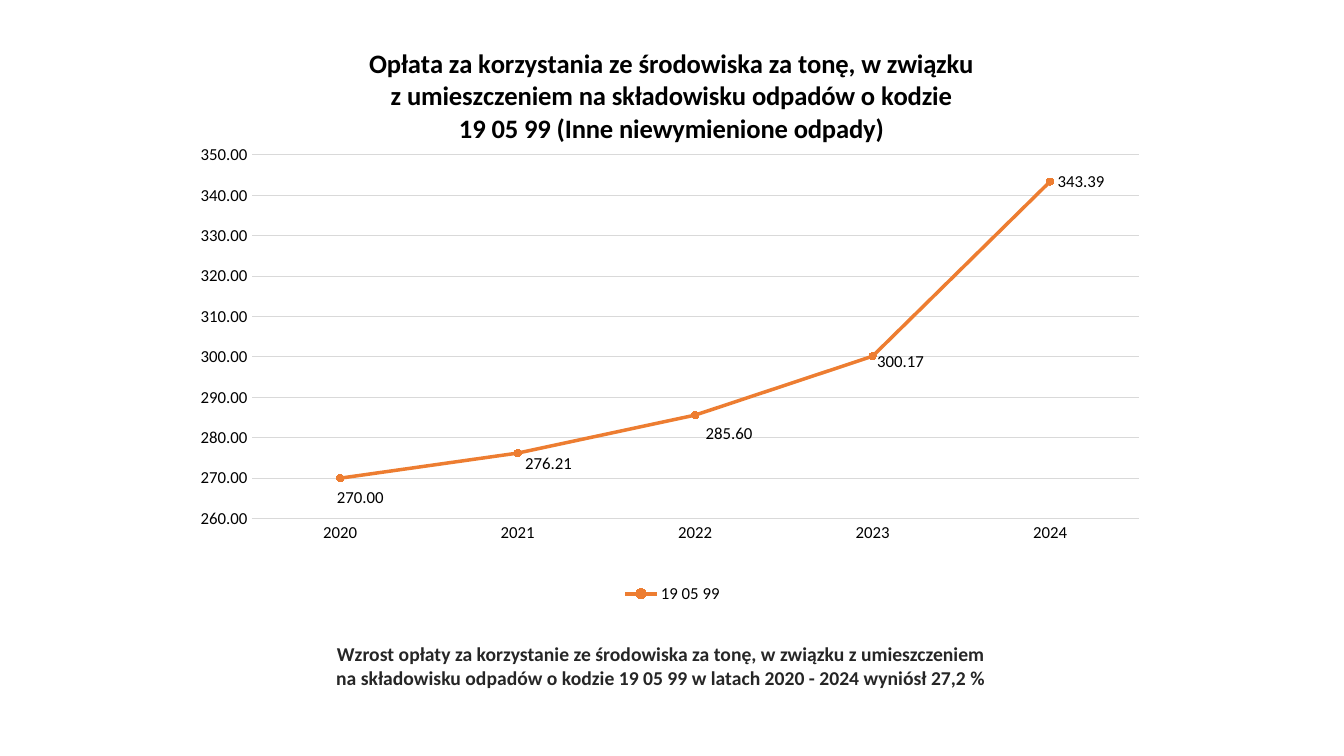
import pptx
import pptx.chart.data
import pptx.dml.color
import pptx.enum.chart
import pptx.enum.text
import pptx.oxml
import pptx.oxml.ns
import pptx.util

THEME = {
    "font": "Calibri",
    "black": "000000", "caption": "262626", "grid": "D9D9D9", "fee": "ED7D31",
    "title_pt": 19, "caption_pt": 14, "label_pt": 12, "base_pt": 10,
}
W, H = 13.33, 7.5


def style(font, size, color="black", bold=False):
    font.name = THEME["font"]
    font.size = pptx.util.Pt(THEME[size])
    font.bold = bold
    font.color.rgb = pptx.dml.color.RGBColor.from_string(THEME[color])


def layout(x, y, w=None, h=None):
    # Manual placement in shares of the chart's size
    parts = [("x", x), ("y", y)]
    modes = [("xMode", "edge"), ("yMode", "edge")] if w or x > 0.1 else []
    if w:
        modes.insert(0, ("layoutTarget", "inner"))
        parts += [("w", w), ("h", h)]
    body = "".join(f'<c:{k} val="{v}"/>' for k, v in modes + parts)
    return pptx.oxml.parse_xml(
        f'<c:layout {pptx.oxml.ns.nsdecls("c")}><c:manualLayout>{body}'
        "</c:manualLayout></c:layout>")


prs = pptx.Presentation()
prs.slide_width = pptx.util.Inches(W)
prs.slide_height = pptx.util.Inches(H)
s = prs.slides.add_slide(prs.slide_layouts[6])
grey = pptx.dml.color.RGBColor.from_string(THEME["grid"])
orange = pptx.dml.color.RGBColor.from_string(THEME["fee"])

# Chart with the yearly fee
data = pptx.chart.data.CategoryChartData(number_format="0.00")
data.categories = ["2020", "2021", "2022", "2023", "2024"]
data.add_series("19 05 99", [270, 276.21, 285.6, 300.17, 343.39])
chart = s.shapes.add_chart(
    pptx.enum.chart.XL_CHART_TYPE.LINE_MARKERS_STACKED,
    *(pptx.util.Inches(v) for v in (1.77, 0.4, 9.8, 5.63)), data).chart
style(chart.font, "base_pt")

# Chart title
chart.has_title = True
title = chart.chart_title
title.include_in_layout = False
tf = title.text_frame
tf.text = ("Opłata za korzystania ze środowiska za tonę, w związku\n"
           "z umieszczeniem na składowisku odpadów o kodzie\n"
           "19 05 99 (Inne niewymienione odpady)")
for p in tf.paragraphs:
    p.alignment = pptx.enum.text.PP_ALIGN.CENTER
    for r in p.runs:
        style(r.font, "title_pt", bold=True)
title_xml = title._element
for old in title_xml.findall(pptx.oxml.ns.qn("c:layout")):
    title_xml.remove(old)
title_xml.insert(1, layout(0.19, 0.005))

# Plot area
plot_xml = chart._chartSpace.chart.plotArea
for old in plot_xml.findall(pptx.oxml.ns.qn("c:layout")):
    plot_xml.remove(old)
plot_xml.insert(0, layout(0.074, 0.202, 0.898, 0.641))

# Axes and legend
years, fees = chart.category_axis, chart.value_axis
for axis in (years, fees):
    axis.major_tick_mark = pptx.enum.chart.XL_TICK_MARK.NONE
    axis.minor_tick_mark = pptx.enum.chart.XL_TICK_MARK.NONE
    style(axis.tick_labels.font, "label_pt")
fees.minimum_scale, fees.maximum_scale, fees.major_unit = 260, 350, 10
fees.tick_labels.number_format = "0.00"
fees.tick_labels.number_format_is_linked = False
fees.has_major_gridlines = True
for line in (years.format.line, fees.major_gridlines.format.line):
    line.color.rgb = grey
    line.width = pptx.util.Pt(0.75)
fees.format.line.fill.background()
chart.has_legend = True
chart.legend.position = pptx.enum.chart.XL_LEGEND_POSITION.BOTTOM
chart.legend.include_in_layout = False
style(chart.legend.font, "label_pt")

# Fee line and markers
chart.plots[0].vary_by_categories = False
ser = chart.plots[0].series[0]
ser.smooth = False
ser.format.line.color.rgb = orange
ser.format.line.width = pptx.util.Pt(2.5)
ser.marker.style = pptx.enum.chart.XL_MARKER_STYLE.CIRCLE
ser.marker.size = 5
ser.marker.format.fill.solid()
ser.marker.format.fill.fore_color.rgb = orange
ser.marker.format.line.color.rgb = orange

# Value labels, the first four nudged off the line
right = pptx.enum.chart.XL_LABEL_POSITION.RIGHT
labels = ser.data_labels
labels.show_value = True
labels.number_format = "0.00"
labels.number_format_is_linked = False
labels.position = right
style(labels.font, "label_pt")
nudges = [(-0.011, 0.035), (0, 0.019), (0.003, 0.033), (-0.003, 0.01)]
for i, (dx, dy) in enumerate(nudges):
    label = ser.points[i].data_label
    label.position = right
    style(label.font, "label_pt")
    labels._element.dLbl_lst[i].insert(1, layout(dx, dy))

# Conclusion under the chart
sp = s.shapes.add_textbox(*(pptx.util.Inches(v) for v in (0.88, 6.32, 11.35, 0.57)))
tf = sp.text_frame
tf.word_wrap = True
tf.auto_size = pptx.enum.text.MSO_AUTO_SIZE.SHAPE_TO_FIT_TEXT
p = tf.paragraphs[0]
p.text = ("Wzrost opłaty za korzystanie ze środowiska za tonę, w związku z umieszczeniem\v"
          "na składowisku odpadów o kodzie 19 05 99 w latach 2020 - 2024 wyniósł 27,2 %")
p.alignment = pptx.enum.text.PP_ALIGN.CENTER
for r in p.runs:
    style(r.font, "caption_pt", "caption", bold=True)

prs.save("out.pptx")
